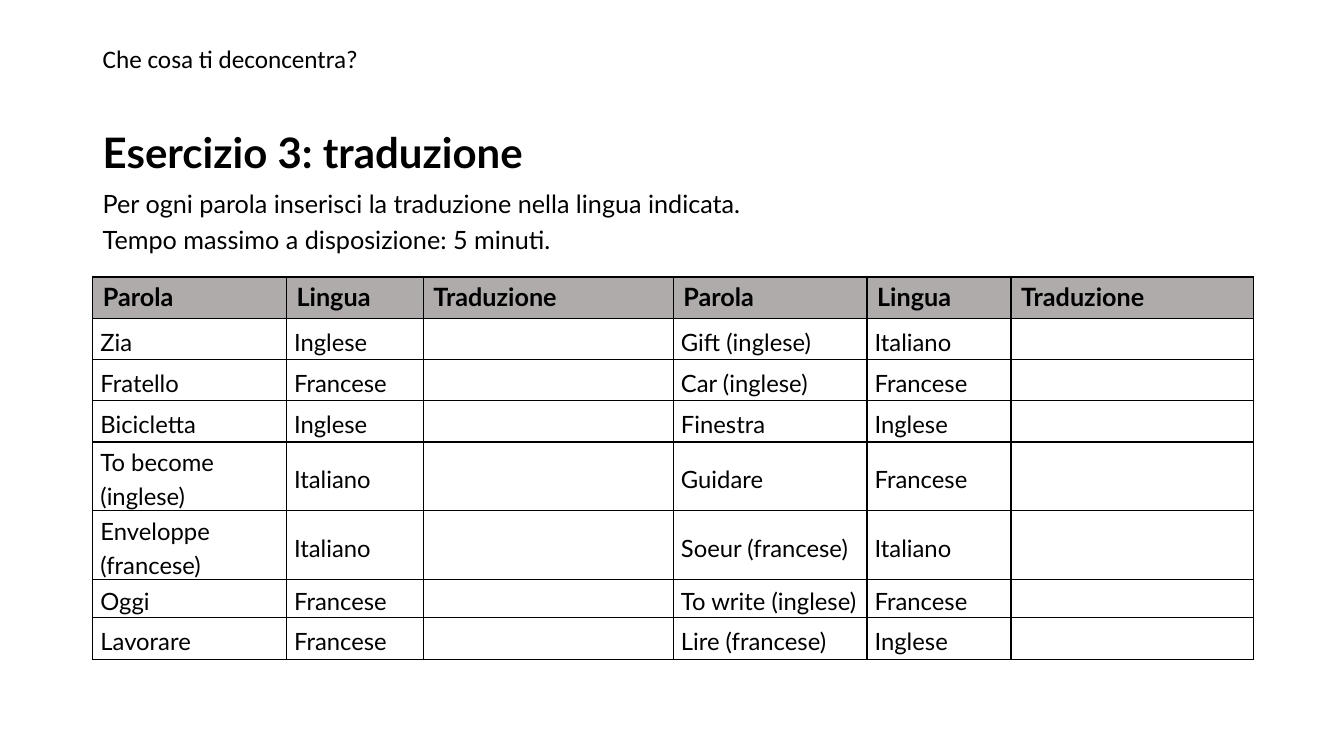
from dataclasses import dataclass

from lxml.etree import SubElement
from pptx import Presentation
from pptx.dml.color import RGBColor
from pptx.enum.text import MSO_ANCHOR as Anchor, MSO_AUTO_SIZE as AutoSize
from pptx.oxml.ns import qn
from pptx.slide import Slide
from pptx.table import _Cell as Cell
from pptx.text.text import _Paragraph as Paragraph
from pptx.util import Cm, Pt

BLACK = RGBColor(0x00, 0x00, 0x00)
HEADER_GREY = RGBColor(0xAF, 0xAB, 0xAB)

LEFT, WIDTH = 2.34, 29.21
TABLE_TOP = 6.98
COLUMN_WIDTHS = (4.88, 3.45, 6.3, 4.88, 3.63, 6.1)
ROW_HEIGHTS = (1.04, 1.04, 1.04, 1.04, 1.73, 1.73, 0.97, 1.04)


@dataclass(frozen=True)
class TextBlock:
    lines: tuple[str, ...]
    top: float
    width: float
    height: float
    size: float
    font: str = "Lato"
    bold: bool = False
    spacing: float = 1.0
    wrap: bool = True
    anchor: Anchor = Anchor.TOP
    auto_size: AutoSize = AutoSize.SHAPE_TO_FIT_TEXT


@dataclass(frozen=True)
class Exercise:
    word: str
    language: str


TEXT_BLOCKS = (
    TextBlock(("Esercizio 3: traduzione",), 3.12, WIDTH, 1.57, 30, bold=True,
              spacing=0.9, anchor=Anchor.MIDDLE, auto_size=AutoSize.NONE),
    TextBlock(("Per ogni parola inserisci la traduzione nella lingua indicata.",
               "Tempo massimo a disposizione: 5 minuti."),
              4.47, WIDTH, 2.03, 18, spacing=1.2),
    TextBlock(("Che cosa ti deconcentra?",), 0.97, 7.04, 1.02, 18,
              font="Calibri", wrap=False),
)

HEADINGS = ("Parola", "Lingua", "Traduzione")
LEFT_EXERCISES = (
    Exercise("Zia", "Inglese"),
    Exercise("Fratello", "Francese"),
    Exercise("Bicicletta", "Inglese"),
    Exercise("To become (inglese)", "Italiano"),
    Exercise("Enveloppe (francese)", "Italiano"),
    Exercise("Oggi", "Francese"),
    Exercise("Lavorare", "Francese"),
)
RIGHT_EXERCISES = (
    Exercise("Gift (inglese)", "Italiano"),
    Exercise("Car (inglese)", "Francese"),
    Exercise("Finestra", "Inglese"),
    Exercise("Guidare", "Francese"),
    Exercise("Soeur (francese)", "Italiano"),
    Exercise("To write (inglese)", "Francese"),
    Exercise("Lire (francese)", "Inglese"),
)


def add_run(paragraph: Paragraph, text: str, size: float,
            font: str = "Lato", bold: bool = False) -> None:
    run = paragraph.add_run()
    run.text = text
    run.font.name = font
    run.font.size = Pt(size)
    run.font.bold = bold
    run.font.color.rgb = BLACK


def add_text_block(slide: Slide, block: TextBlock) -> None:
    shape = slide.shapes.add_textbox(Cm(LEFT), Cm(block.top),
                                     Cm(block.width), Cm(block.height))
    frame = shape.text_frame
    frame.word_wrap = block.wrap
    frame.auto_size = block.auto_size
    frame.vertical_anchor = block.anchor
    paragraph = frame.paragraphs[0]
    paragraph.line_spacing = block.spacing
    for index, line in enumerate(block.lines):
        if index:
            paragraph.add_line_break()
        add_run(paragraph, line, block.size, block.font, block.bold)


def add_borders(cell: Cell) -> None:
    properties = cell._tc.get_or_add_tcPr()
    for side in ("a:lnL", "a:lnR", "a:lnT", "a:lnB"):
        line = SubElement(properties, qn(side), w=str(Pt(1)))
        fill = SubElement(line, qn("a:solidFill"))
        SubElement(fill, qn("a:srgbClr"), val=str(BLACK))


def fill_header_cell(cell: Cell, text: str) -> None:
    add_borders(cell)
    cell.fill.solid()
    cell.fill.fore_color.rgb = HEADER_GREY
    add_run(cell.text_frame.paragraphs[0], text, 18, bold=True)


def fill_body_cell(cell: Cell, text: str) -> None:
    add_borders(cell)
    cell.fill.background()
    cell.vertical_anchor = Anchor.MIDDLE
    cell.margin_left = cell.margin_right = Cm(0.19)
    cell.margin_top = cell.margin_bottom = Cm(0)
    if text:
        paragraph = cell.text_frame.paragraphs[0]
        paragraph.line_spacing = 1.2
        add_run(paragraph, text, 17)


def add_exercise_table(slide: Slide) -> None:
    table = slide.shapes.add_table(
        len(ROW_HEIGHTS), len(COLUMN_WIDTHS), Cm(LEFT), Cm(TABLE_TOP),
        Cm(sum(COLUMN_WIDTHS)), Cm(sum(ROW_HEIGHTS))).table
    table.horz_banding = False
    for column, width in zip(table.columns, COLUMN_WIDTHS):
        column.width = Cm(width)
    for row, height in zip(table.rows, ROW_HEIGHTS):
        row.height = Cm(height)

    # Header row: the same three headings for both halves
    for index, heading in enumerate(HEADINGS * 2):
        fill_header_cell(table.cell(0, index), heading)

    # Words to translate, with an empty answer cell in each half
    for row_index, pair in enumerate(zip(LEFT_EXERCISES, RIGHT_EXERCISES), 1):
        texts = [text for item in pair for text in (item.word, item.language, "")]
        for column_index, text in enumerate(texts):
            fill_body_cell(table.cell(row_index, column_index), text)


def main() -> None:
    presentation = Presentation()
    presentation.slide_width = Cm(33.87)
    presentation.slide_height = Cm(19.05)
    slide = presentation.slides.add_slide(presentation.slide_layouts[6])

    # Title, instructions and topic line
    for block in TEXT_BLOCKS:
        add_text_block(slide, block)

    # Translation exercise
    add_exercise_table(slide)
    presentation.save("out.pptx")


if __name__ == "__main__":
    main()
